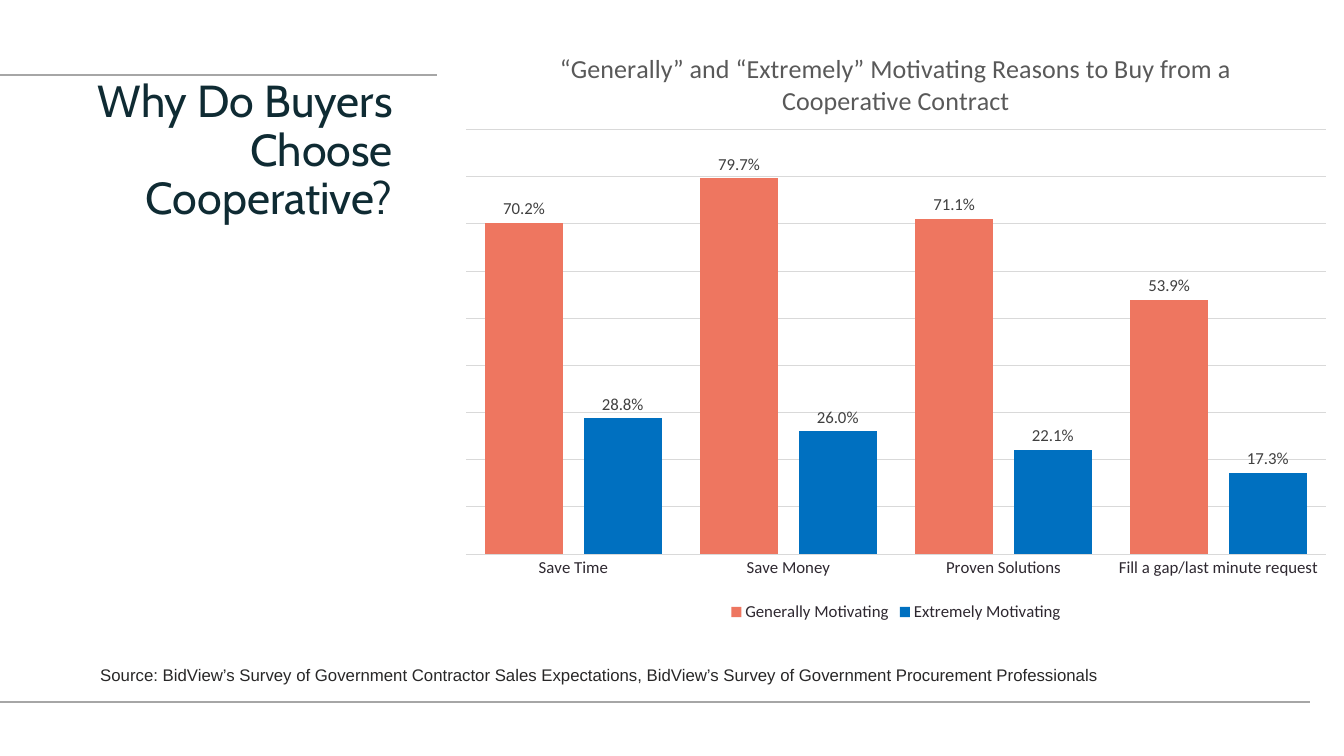
from lxml import etree
from pptx import Presentation
from pptx.chart.data import CategoryChartData
from pptx.dml.color import RGBColor
from pptx.enum.chart import XL_CHART_TYPE, XL_LABEL_POSITION, XL_LEGEND_POSITION, XL_TICK_MARK
from pptx.enum.shapes import MSO_CONNECTOR
from pptx.enum.text import MSO_ANCHOR, MSO_AUTO_SIZE, PP_ALIGN
from pptx.oxml import parse_xml
from pptx.oxml.ns import nsdecls, qn
from pptx.util import Emu, Pt

INK, RULE, GRID, CHART_TEXT = "0F2B33", "A6A6A6", "D9D9D9", "2E2830"
REASONS = ["Save Time", "Save Money", "Proven Solutions", "Fill a gap/last minute request"]
MOTIVATION = [
    ("Generally Motivating", "EE7660", (0.702, 0.797, 0.711, 0.539)),
    ("Extremely Motivating", "0070C0", (0.288, 0.26, 0.221, 0.173)),
]


def px(length):
    return Emu(round(length * 914400 / 100.8))


def rgb(value):
    return RGBColor.from_string(value)


class SlideBuilder:
    chart_font = "Calibri"

    def __init__(self, width, height):
        self.deck = Presentation()
        self.deck.slide_width, self.deck.slide_height = px(width), px(height)
        self.slide = self.deck.slides.add_slide(self.deck.slide_layouts[5])

    def style(self, font, size, color, name):
        font.size, font.name, font.bold = Pt(size), name, False
        font.color.rgb = rgb(color)

    def line(self, line, color, width):
        line.color.rgb = rgb(color)
        line.width = Pt(width)

    def rule(self, y, right):
        rule = self.slide.shapes.add_connector(MSO_CONNECTOR.STRAIGHT, 0, px(y), px(right), px(y))
        self.line(rule.line, RULE, 1)
        etree.SubElement(rule._element.spPr, qn("a:effectLst"))

    def fill_text(self, shape, text, size, color, font, spacing):
        frame = shape.text_frame
        frame.word_wrap = True
        frame.auto_size = MSO_AUTO_SIZE.NONE
        frame.vertical_anchor = MSO_ANCHOR.TOP
        frame.text = text
        paragraph = frame.paragraphs[0]
        paragraph.alignment = PP_ALIGN.RIGHT
        paragraph.line_spacing = spacing
        self.style(paragraph.font, size, color, font)

    def title(self, box, text):
        heading = self.slide.shapes.title
        heading.left, heading.top, heading.width, heading.height = map(px, box)
        self.fill_text(heading, text, 32, INK, "Cabin", 0.9)

    def text(self, box, text):
        note = self.slide.shapes.add_textbox(*map(px, box))
        self.fill_text(note, text, 12, "282727", "Arial", Pt(32))

    def chart(self, box, heading):
        data = CategoryChartData(number_format="0.0%")
        data.categories = REASONS
        for name, _, shares in MOTIVATION:
            data.add_series(name, shares)
        chart = self.slide.shapes.add_chart(
            XL_CHART_TYPE.COLUMN_CLUSTERED, *map(px, box), data).chart
        self.style(chart.font, 10, "000000", self.chart_font)
        chart.has_title = True
        chart.chart_title.text_frame.text = heading
        self.style(chart.chart_title.text_frame.paragraphs[0].font, 18.6, "595959", self.chart_font)
        chart.chart_title.include_in_layout = False
        chart.has_legend = True
        chart.legend.position = XL_LEGEND_POSITION.BOTTOM
        chart.legend.include_in_layout = False
        self.style(chart.legend.font, 12, CHART_TEXT, self.chart_font)
        self.axes(chart)
        self.columns(chart.plots[0])
        self.place_plot(chart)

    def axes(self, chart):
        reasons, shares = chart.category_axis, chart.value_axis
        reasons.major_tick_mark = XL_TICK_MARK.NONE
        self.style(reasons.tick_labels.font, 12, CHART_TEXT, self.chart_font)
        self.line(reasons.format.line, GRID, 0.75)
        shares.minimum_scale, shares.maximum_scale, shares.major_unit = 0, 0.9, 0.1
        shares.has_major_gridlines = True
        self.line(shares.major_gridlines.format.line, GRID, 0.75)
        shares.visible = False

    def columns(self, plot):
        plot.gap_width, plot.overlap = 50, -27
        plot.vary_by_categories = False
        for series, (_, color, _) in zip(plot.series, MOTIVATION):
            series.format.fill.solid()
            series.format.fill.fore_color.rgb = rgb(color)
            labels = series.data_labels
            labels.show_value = True
            labels.position = XL_LABEL_POSITION.OUTSIDE_END
            labels.number_format, labels.number_format_is_linked = "0.0%", False
            self.style(labels.font, 12, "404040", self.chart_font)

    def place_plot(self, chart):
        area = chart._chartSpace.chart.plotArea
        for automatic in area.findall(qn("c:layout")):
            area.remove(automatic)
        settings = [("layoutTarget", "inner"), ("xMode", "edge"), ("yMode", "edge"),
                    ("x", 0.02), ("y", 0.17), ("w", 0.96), ("h", 0.71)]
        values = "".join(f'<c:{key} val="{value}"/>' for key, value in settings)
        area.insert(0, parse_xml(
            f'<c:layout {nsdecls("c")}><c:manualLayout>{values}</c:manualLayout></c:layout>'))


def main():
    page = SlideBuilder(1344, 756)
    page.rule(75, 437)
    page.rule(702, 1310)
    page.title((11, 74, 392, 482), "Why Do Buyers Choose Cooperative?")
    page.text((87, 635, 1022, 62),
              "Source: BidView’s Survey of Government Contractor Sales Expectations, "
              "BidView’s Survey of Government Procurement Professionals")
    page.chart((448, 28, 896, 598),
               "“Generally” and “Extremely” Motivating Reasons to Buy from a Cooperative Contract")
    page.deck.save("out.pptx")


if __name__ == "__main__":
    main()
